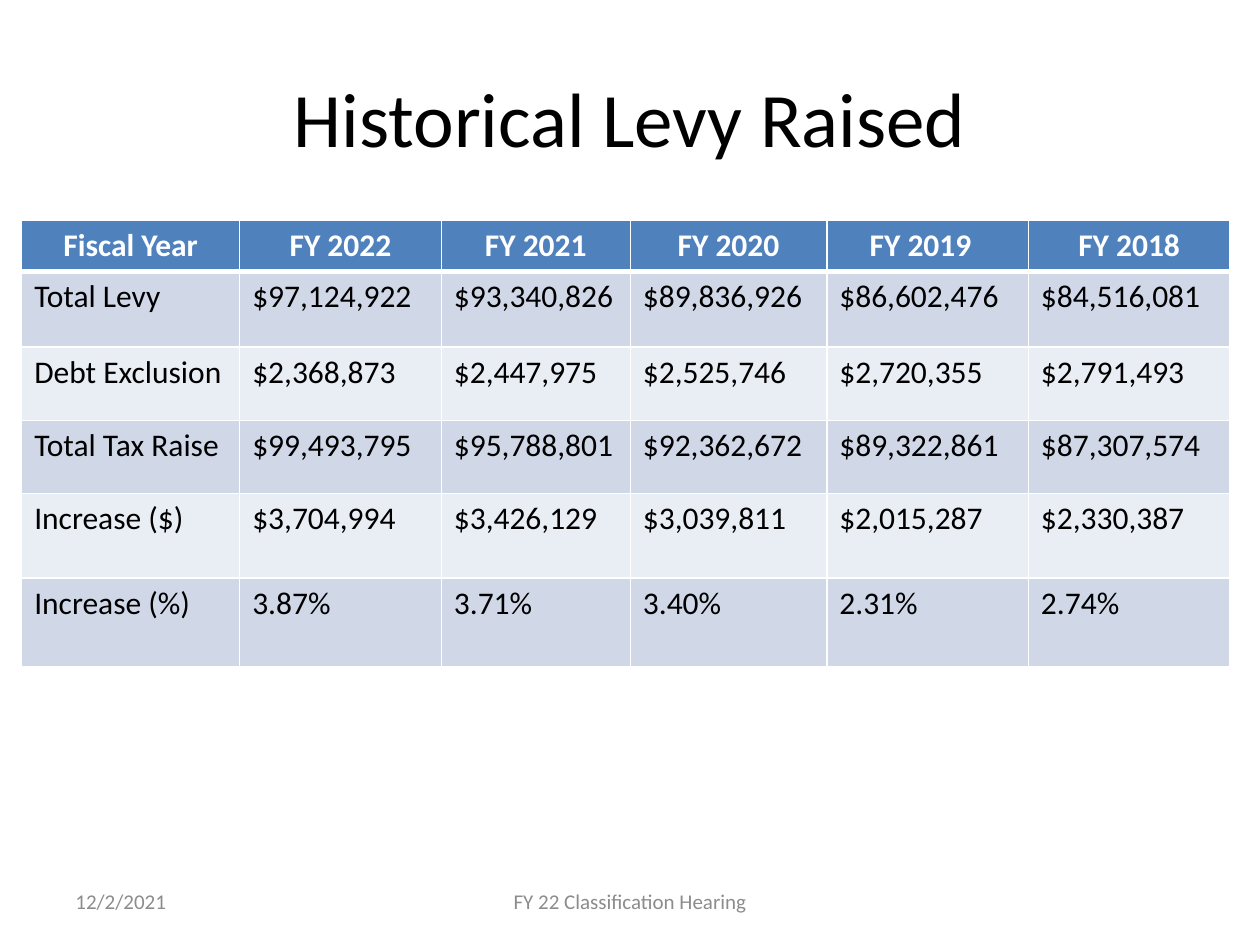
"""Build the slide with the table of historical levies raised."""
from dataclasses import dataclass

import pptx
import pptx.dml.color
import pptx.enum.text
import pptx.oxml
import pptx.oxml.ns
import pptx.util

Pt = pptx.util.Pt
Align = pptx.enum.text.PP_ALIGN
Anchor = pptx.enum.text.MSO_ANCHOR


@dataclass(frozen=True)
class Theme:
    font: str = "Calibri"
    text: str = "000000"
    light: str = "FFFFFF"
    muted: str = "8C8C8C"
    header: str = "4F81BD"
    bands: tuple[str, str] = ("D0D8E8", "E9EDF4")
    title_size: float = 44
    table_size: float = 18
    footer_size: float = 12
    rule: float = 1
    header_rule: float = 3


@dataclass(frozen=True)
class Footer:
    text: str
    left: float
    width: float
    align: Align


THEME = Theme()
COLUMN_WIDTHS = (124.6, 115.2, 108, 112.3, 115.2, 115.2)
ROW_HEIGHTS = (28.8, 43.2, 41.8, 41.8, 48.2, 51.1)
LEVY_ROWS = (
    ("Fiscal Year", "FY 2022", "FY 2021", "FY 2020", "FY 2019", "FY 2018"),
    ("Total Levy", "$97,124,922", "$93,340,826", "$89,836,926", "$86,602,476", "$84,516,081"),
    ("Debt Exclusion", "$2,368,873", "$2,447,975", "$2,525,746", "$2,720,355", "$2,791,493"),
    ("Total Tax Raise", "$99,493,795", "$95,788,801", "$92,362,672", "$89,322,861", "$87,307,574"),
    ("Increase ($)", "$3,704,994", "$3,426,129", "$3,039,811", "$2,015,287", "$2,330,387"),
    ("Increase (%)", "3.87%", "3.71%", "3.40%", "2.31%", "2.74%"),
)
FOOTERS = (
    Footer("12/2/2021", 36, 168, Align.LEFT),
    Footer("FY 22 Classification Hearing", 246, 228, Align.CENTER),
)


def rgb(value: str) -> pptx.dml.color.RGBColor:
    return pptx.dml.color.RGBColor.from_string(value)


def write_text(frame, text: str, *, size: float, color: str,
               align: Align = Align.LEFT, bold: bool = False) -> None:
    paragraph = frame.paragraphs[0]
    paragraph.alignment = align
    run = paragraph.add_run()
    run.text = text
    run.font.name = THEME.font
    run.font.size = Pt(size)
    run.font.bold = bold
    run.font.color.rgb = rgb(color)


def set_borders(cell, top: float, bottom: float) -> None:
    properties = cell._tc.get_or_add_tcPr()
    sides = {"L": THEME.rule, "R": THEME.rule, "T": top, "B": bottom}
    for index, (side, width) in enumerate(sides.items()):
        properties.insert(index, pptx.oxml.parse_xml(
            f'<a:ln{side} {pptx.oxml.ns.nsdecls("a")} w="{Pt(width)}">'
            f'<a:solidFill><a:srgbClr val="{THEME.light}"/></a:solidFill></a:ln{side}>'))


def add_title(slide, text: str) -> None:
    title = slide.shapes.title
    title.left, title.top, title.width, title.height = Pt(36), Pt(21.6), Pt(648), Pt(90)
    title.text_frame.vertical_anchor = Anchor.MIDDLE
    write_text(title.text_frame, text, size=THEME.title_size, color=THEME.text, align=Align.CENTER)


def add_levy_table(slide) -> None:
    table = slide.shapes.add_table(
        len(LEVY_ROWS), len(COLUMN_WIDTHS), Pt(12.4), Pt(126),
        Pt(sum(COLUMN_WIDTHS)), Pt(sum(ROW_HEIGHTS))).table
    for column, width in zip(table.columns, COLUMN_WIDTHS):
        column.width = Pt(width)
    for index, (row, height, texts) in enumerate(zip(table.rows, ROW_HEIGHTS, LEVY_ROWS)):
        row.height = Pt(height)
        is_header = index == 0
        fill = THEME.header if is_header else THEME.bands[(index - 1) % 2]
        for cell, text in zip(row.cells, texts):
            cell.fill.solid()
            cell.fill.fore_color.rgb = rgb(fill)
            set_borders(cell, THEME.header_rule if index == 1 else THEME.rule,
                        THEME.header_rule if is_header else THEME.rule)
            write_text(cell.text_frame, text, size=THEME.table_size, bold=is_header,
                       color=THEME.light if is_header else THEME.text,
                       align=Align.CENTER if is_header else Align.LEFT)
    table.cell(0, LEVY_ROWS[0].index("FY 2019")).margin_right = Pt(15.2)


def add_footer(slide, footer: Footer) -> None:
    shape = slide.shapes.add_textbox(Pt(footer.left), Pt(500.5), Pt(footer.width), Pt(28.8))
    shape.text_frame.word_wrap = True
    shape.text_frame.vertical_anchor = Anchor.MIDDLE
    write_text(shape.text_frame, footer.text, size=THEME.footer_size,
               color=THEME.muted, align=footer.align)


def main() -> None:
    presentation = pptx.Presentation()
    presentation.slide_width, presentation.slide_height = Pt(720), Pt(540)
    slide = presentation.slides.add_slide(presentation.slide_layouts[5])
    add_title(slide, "Historical Levy Raised")
    add_levy_table(slide)
    for footer in FOOTERS:
        add_footer(slide, footer)
    presentation.save("out.pptx")


if __name__ == "__main__":
    main()
